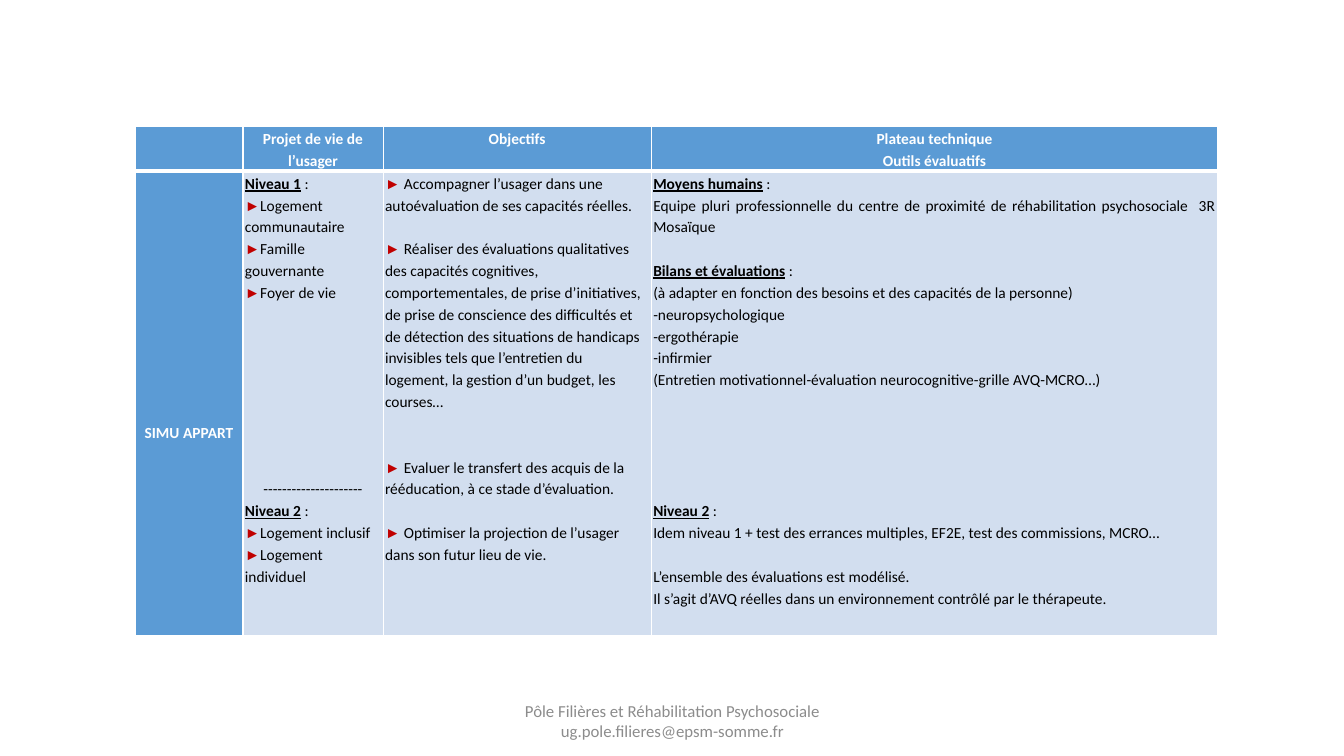
from dataclasses import dataclass
from lxml.etree import SubElement
from pptx import Presentation
from pptx.dml.color import RGBColor
from pptx.enum.text import MSO_ANCHOR, PP_ALIGN
from pptx.oxml.ns import qn
from pptx.util import Inches, Pt

COLORS = {"head": "5B9BD5", "body": "D2DEEF", "white": "FFFFFF",
          "black": "000000", "arrow": "C00000", "footer": "8C8C8C"}
LINE = 15.6  # height of one text line, in points
LEFT, CENTER, JUSTIFY = PP_ALIGN.LEFT, PP_ALIGN.CENTER, PP_ALIGN.JUSTIFY


@dataclass
class Run:
    text: str
    color: str = "black"
    bold: bool = False
    underline: bool = False
    font: str = "Calibri"
    size: float = 11


@dataclass
class Para:
    runs: list[Run]
    align: PP_ALIGN = JUSTIFY
    gap: int = 0  # free lines above


def plain(text: str, align: PP_ALIGN = JUSTIFY, gap: int = 0) -> Para:
    return Para([Run(text)], align, gap)


def heading(text: str, gap: int = 0) -> Para:
    return Para([Run(text, bold=True, underline=True), Run("\u00a0:")], JUSTIFY, gap)


def arrow(text: str, align: PP_ALIGN = JUSTIFY, gap: int = 0, mark: str = "►") -> Para:
    return Para([Run(mark, "arrow", font="Arial Narrow"), Run(text)], align, gap)


def goal(text: str, gap: int = 0) -> Para:
    return arrow(text, LEFT, gap, "► ")


def title(text: str) -> Para:
    return Para([Run(text, "white", bold=True)], CENTER)


def write(tf, paras: list[Para], spacing: float) -> None:
    for i, para in enumerate(paras):
        p = tf.paragraphs[0] if i == 0 else tf.add_paragraph()
        p.alignment = para.align
        p.line_spacing = spacing
        if para.gap:
            p.space_before = Pt(para.gap * LINE)
        for run in para.runs:
            r = p.add_run()
            r.text = run.text
            r.font.name, r.font.size = run.font, Pt(run.size)
            r.font.bold, r.font.underline = run.bold, run.underline
            r.font.color.rgb = RGBColor.from_string(COLORS[run.color])


def set_borders(cell, top: float, bottom: float) -> None:
    tc_pr = cell._tc.get_or_add_tcPr()
    for side, width in (("L", 1), ("R", 1), ("T", top), ("B", bottom)):
        ln = SubElement(tc_pr, qn(f"a:ln{side}"), w=str(Pt(width)))
        fill = SubElement(ln, qn("a:solidFill"))
        SubElement(fill, qn("a:srgbClr"), val=COLORS["white"])


# Table content, row by row
HEADER = [
    [],
    [title("Projet de vie de l’usager")],
    [title("Objectifs")],
    [title("Plateau technique"), title("Outils évaluatifs")],
]
PROJECTS = [
    heading("Niveau 1"),
    arrow("Logement communautaire"),
    arrow("Famille gouvernante"),
    arrow("Foyer de vie"),
    plain("-" * 21, CENTER, gap=8),
    heading("Niveau 2"),
    arrow("Logement inclusif"),
    arrow("Logement individuel"),
]
GOALS = [
    goal("Accompagner l’usager dans une autoévaluation de ses capacités réelles."),
    goal("Réaliser des évaluations qualitatives des capacités cognitives, "
         "comportementales, de prise d’initiatives, de prise de conscience des "
         "difficultés et de détection des situations de handicaps invisibles tels "
         "que l’entretien du logement, la gestion d’un budget, les courses…", gap=1),
    goal("Evaluer le transfert des acquis de la rééducation, à ce stade "
         "d’évaluation.", gap=2),
    goal("Optimiser la projection de l’usager dans son futur lieu de vie.", gap=1),
]
TOOLS = [
    heading("Moyens humains"),
    plain("Equipe pluri professionnelle du centre de proximité de réhabilitation "
          "psychosociale  3R Mosaïque"),
    heading("Bilans et évaluations", gap=1),
    plain("(à adapter en fonction des besoins et des capacités de la personne)"),
    plain("-neuropsychologique"),
    plain("-ergothérapie"),
    plain("-infirmier"),
    plain("(Entretien motivationnel-évaluation neurocognitive-grille AVQ-MCRO…)", LEFT),
    heading("Niveau 2", gap=5),
    plain("Idem niveau 1 + test des errances multiples, EF2E, test des commissions, MCRO…"),
    plain("L’ensemble des évaluations est modélisé.", gap=1),
    plain("Il s’agit d’AVQ réelles dans un environnement contrôlé par le thérapeute.", LEFT),
]
ROWS = [HEADER, [[title("SIMU APPART")], PROJECTS, GOALS, TOOLS]]
COL_WIDTHS = [1.07, 1.39, 2.66, 5.62]
ROW_HEIGHTS = [0.43, 4.61]


def add_table(s) -> None:
    table = s.shapes.add_table(len(ROWS), len(COL_WIDTHS), Inches(1.34), Inches(1.25),
                               Inches(sum(COL_WIDTHS)), Inches(sum(ROW_HEIGHTS))).table
    table.horz_banding = False
    for column, width in zip(table.columns, COL_WIDTHS):
        column.width = Inches(width)
    for i, cells in enumerate(ROWS):
        table.rows[i].height = Inches(ROW_HEIGHTS[i])
        for j, paras in enumerate(cells):
            cell = table.cell(i, j)
            cell.margin_left = cell.margin_right = Inches(0.02)
            cell.margin_top, cell.margin_bottom = Inches(0.01), Inches(0)
            set_borders(cell, *((1, 3) if i == 0 else (3, 1)))
            cell.fill.solid()
            shade = "head" if i == 0 or j == 0 else "body"
            cell.fill.fore_color.rgb = RGBColor.from_string(COLORS[shade])
            write(cell.text_frame, paras, 1.15)
    # Row label sits a little below the middle
    label = table.cell(1, 0)
    label.vertical_anchor = MSO_ANCHOR.MIDDLE
    label.margin_top = Inches(0.58)


def add_footer(s) -> None:
    sp = s.shapes.add_textbox(Inches(4.42), Inches(6.95), Inches(4.5), Inches(0.4))
    tf = sp.text_frame
    tf.word_wrap = True
    tf.vertical_anchor = MSO_ANCHOR.MIDDLE
    text = "Pôle Filières et Réhabilitation Psychosociale ug.pole.filieres@epsm-somme.fr"
    write(tf, [Para([Run(text, "footer", size=12)], CENTER)], 1.0)


def main() -> None:
    prs = Presentation()
    prs.slide_width, prs.slide_height = Inches(13.33), Inches(7.5)
    s = prs.slides.add_slide(prs.slide_layouts[6])
    add_table(s)
    add_footer(s)
    prs.save("out.pptx")


if __name__ == "__main__":
    main()
